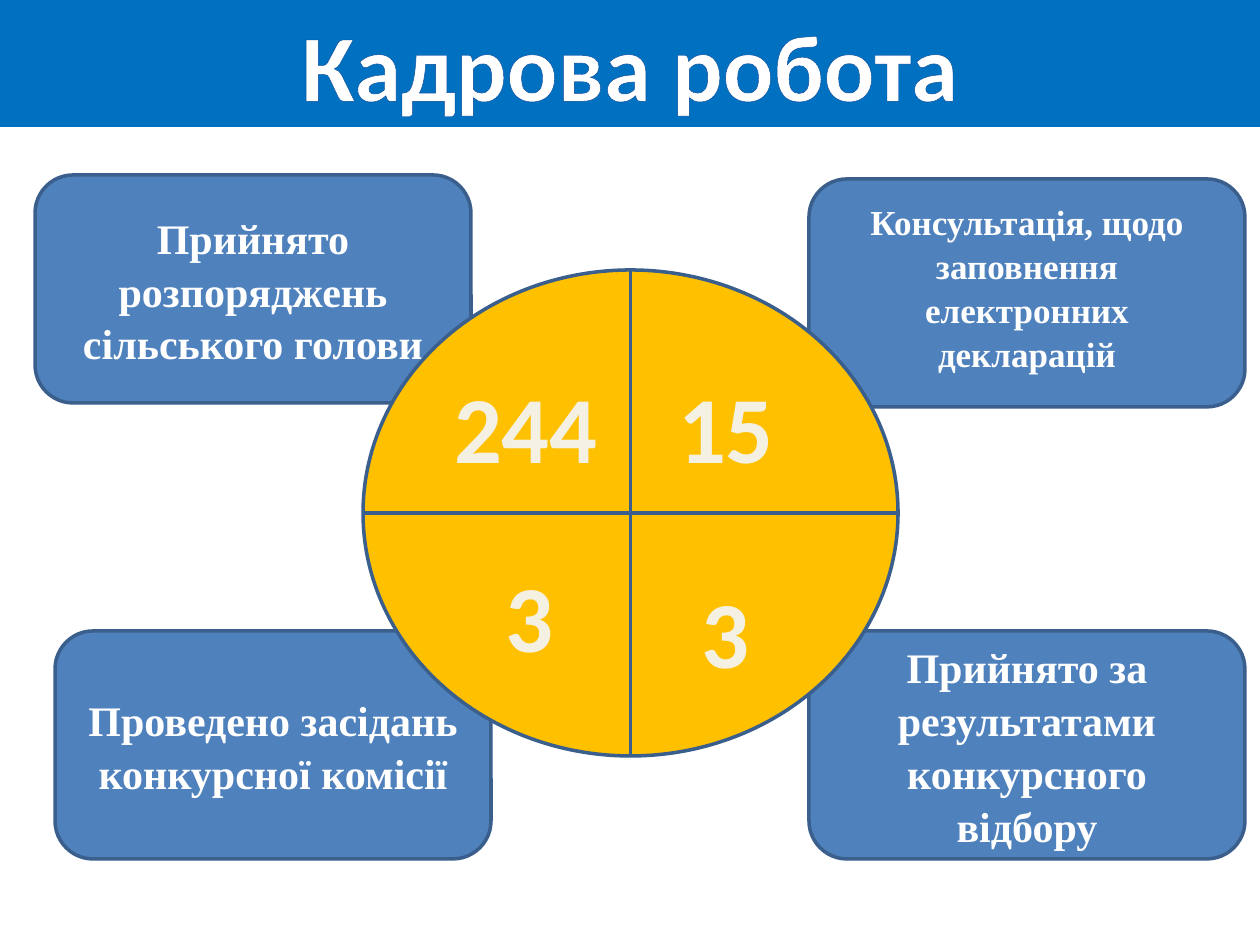
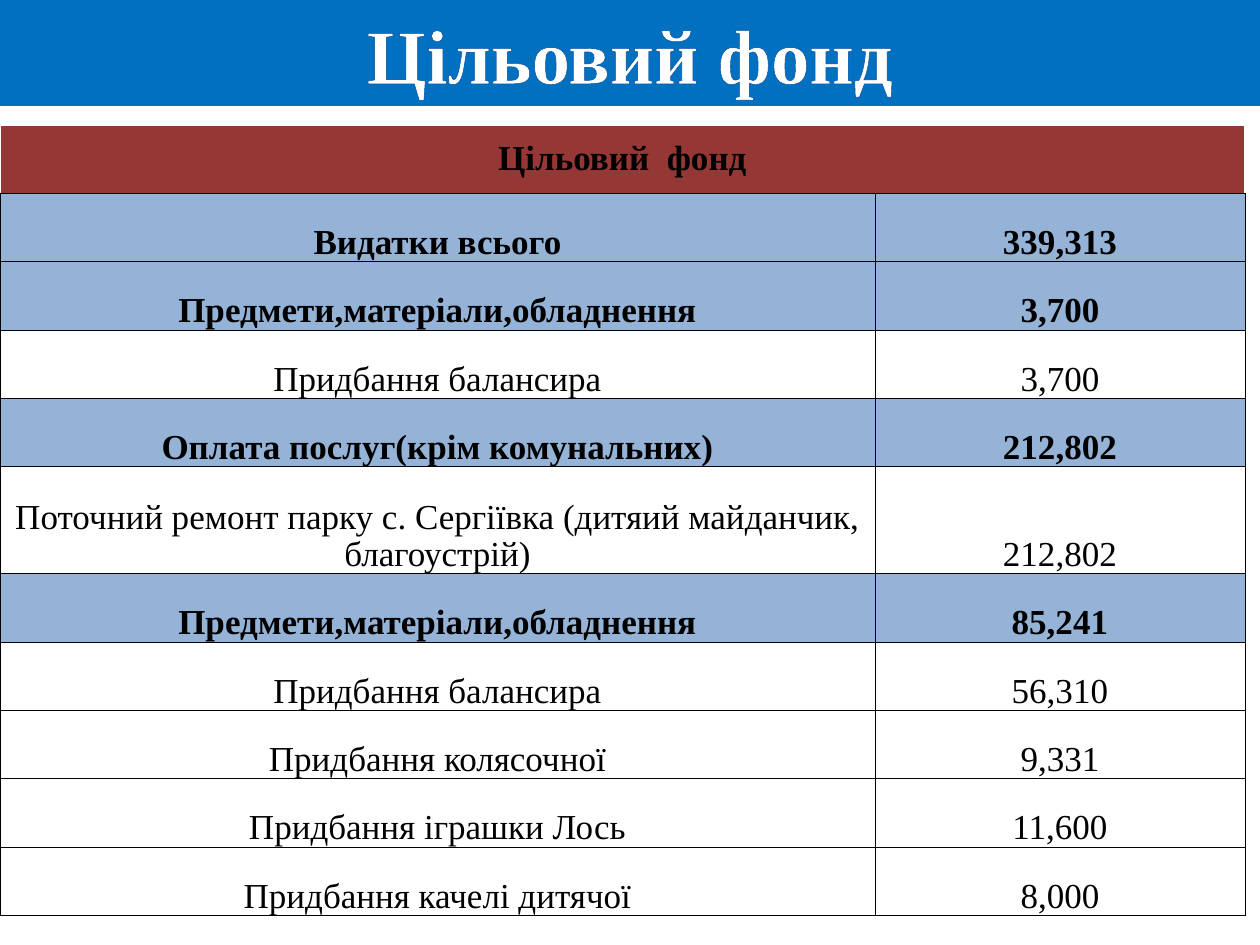
"""Build two slides: staff work figures and the target fund table."""
from typing import NamedTuple

from lxml import etree
from pptx import Presentation
from pptx import util as u
from pptx.dml.color import RGBColor
from pptx.enum import shapes as sh, text as tx
from pptx.oxml import ns

SCALE = 914400 / 126
BAND = RGBColor(0x00, 0x70, 0xC0)
BLUE = RGBColor(0x4F, 0x81, 0xBD)
EDGE = RGBColor(0x3A, 0x5F, 0x8C)
GOLD = RGBColor(0xFF, 0xC0, 0x00)
CREAM = RGBColor(0xF4, 0xF1, 0xE3)
RIM = RGBColor(0x05, 0x46, 0x97)
RED = RGBColor(0x95, 0x37, 0x35)
PALE = RGBColor(0x95, 0xB3, 0xD7)
WHITE = RGBColor(0xFF, 0xFF, 0xFF)
BLACK = RGBColor(0x00, 0x00, 0x00)
SANS = "Calibri"
SERIF = "Times New Roman"


class Card(NamedTuple):
    left: int
    top: int
    text: str
    size: int = 24
    inset: int | None = None


class Count(NamedTuple):
    left: int
    top: int
    width: int
    text: str


class Row(NamedTuple):
    name: str
    sum: str
    head: bool = False
    tall: bool = False


CARDS = [
    Card(35, 175, "Прийнято розпоряджень сільського голови"),
    Card(55, 631, "Проведено засідань конкурсної комісії"),
    Card(809, 631, "Прийнято за результатами конкурсного відбору"),
    Card(809, 179, "Консультація, щодо заповнення електронних декларацій", 20, 8),
]
COUNTS = [
    Count(441, 363, 170, "244"),
    Count(493, 552, 74, "3"),
    Count(689, 568, 74, "3"),
    Count(665, 363, 122, "15"),
]
ROWS = [
    Row("Видатки всього", "339,313", head=True),
    Row("Предмети,матеріали,обладнення", "3,700", head=True),
    Row("Придбання балансира", "3,700"),
    Row("Оплата послуг(крім комунальних)", "212,802", head=True),
    Row("Поточний ремонт парку с. Сергіївка (дитяий майданчик, благоустрій)",
        "212,802", tall=True),
    Row("Предмети,матеріали,обладнення", "85,241", head=True),
    Row("Придбання балансира", "56,310"),
    Row("Придбання колясочної", "9,331"),
    Row("Придбання іграшки Лось", "11,600"),
    Row("Придбання качелі дитячої", "8,000"),
]


def px(*vals: int) -> list[int]:
    return [round(v * SCALE) for v in vals]


def line(host, tag: str, width: float, color: RGBColor):
    ln = etree.SubElement(host, ns.qn(tag), w=str(u.Pt(width)))
    fill = etree.SubElement(ln, ns.qn("a:solidFill"))
    etree.SubElement(fill, ns.qn("a:srgbClr"), val=str(color))
    return ln


def put(frame, text: str, *, size: int, font: str = SERIF, color: RGBColor = WHITE,
        bold: bool = True, space: float = 1.0, rim: bool = False) -> None:
    para = frame.paragraphs[0]
    para.alignment = tx.PP_ALIGN.CENTER
    para.line_spacing = space
    run = para.add_run()
    run.text = text
    run.font.size = u.Pt(size)
    run.font.name = font
    run.font.bold = bold
    run.font.color.rgb = color
    if rim:
        props = run.font._element
        props.insert(0, line(props, "a:ln", 1, RIM))


def start(deck, text: str, high: int, **look):
    slide = deck.slides.add_slide(deck.slide_layouts[5])
    title = slide.shapes.title
    title.left, title.top, title.width, title.height = px(0, 0, 1260, high)
    title.fill.solid()
    title.fill.fore_color.rgb = BAND
    frame = title.text_frame
    frame.auto_size = tx.MSO_AUTO_SIZE.NONE
    frame.vertical_anchor = tx.MSO_ANCHOR.MIDDLE
    put(frame, text, rim=True, **look)
    return slide


def draw(slide, kind, area: tuple[int, ...], color: RGBColor):
    shape = slide.shapes.add_shape(kind, *px(*area))
    shape.shadow.inherit = False
    shape.fill.solid()
    shape.fill.fore_color.rgb = color
    shape.line.color.rgb = EDGE
    shape.line.width = u.Pt(2)
    return shape


def add_card(slide, card: Card) -> None:
    area = (card.left, card.top, 436, 228)
    frame = draw(slide, sh.MSO_SHAPE.ROUNDED_RECTANGLE, area, BLUE).text_frame
    frame.word_wrap = True
    frame.vertical_anchor = tx.MSO_ANCHOR.MIDDLE
    if card.inset is not None:
        frame.vertical_anchor = tx.MSO_ANCHOR.TOP
        frame.margin_top = px(card.inset)[0]
    put(frame, card.text, size=card.size, space=1.05)


def add_count(slide, count: Count) -> None:
    area = px(count.left, count.top, count.width, 127)
    frame = slide.shapes.add_textbox(*area).text_frame
    frame.word_wrap = False
    put(frame, count.text, size=54, font=SANS, color=CREAM, rim=True)


def fill_cell(cell, text: str, color: RGBColor | None, *, bold: bool,
              sides: str = "LRTB", anchor=tx.MSO_ANCHOR.BOTTOM) -> None:
    cell.margin_left = cell.margin_right = cell.margin_top = px(1)[0]
    cell.margin_bottom = 0
    cell.vertical_anchor = anchor
    for side in sides:
        line(cell._tc.get_or_add_tcPr(), f"a:ln{side}", 0.5, BLACK)
    if color is None:
        cell.fill.background()
    else:
        cell.fill.solid()
        cell.fill.fore_color.rgb = color
    put(cell.text_frame, text, size=20, color=BLACK, bold=bold, space=0.95)


def add_fund(slide) -> None:
    area = px(0, 125, 1245, 791)
    table = slide.shapes.add_table(len(ROWS) + 1, 2, *area).table
    table.first_row = table.horz_banding = False
    for col, width in zip(table.columns, px(875, 370)):
        col.width = width
    tall, rest = px(107, 684)
    low = rest // len(ROWS)
    table.rows[0].height = low
    table.cell(0, 0).merge(table.cell(0, 1))
    fill_cell(table.cell(0, 0), "Цільовий  фонд", RED, bold=True, sides="B",
              anchor=tx.MSO_ANCHOR.MIDDLE)
    for i, row in enumerate(ROWS, 1):
        table.rows[i].height = tall if row.tall else low
        for j, text in enumerate((row.name, row.sum)):
            fill_cell(table.cell(i, j), text, PALE if row.head else None, bold=row.head)


def main() -> None:
    deck = Presentation()
    deck.slide_width, deck.slide_height = px(1260, 945)
    staff = start(deck, "Кадрова робота", 127, size=54, font=SANS)
    for card in CARDS:
        add_card(staff, card)
    draw(staff, sh.MSO_SHAPE.FLOWCHART_OR, (363, 270, 535, 486), GOLD)
    for count in COUNTS:
        add_count(staff, count)
    fund = start(deck, "Цільовий фонд", 106, size=44)
    add_fund(fund)
    deck.save("out.pptx")


if __name__ == "__main__":
    main()
